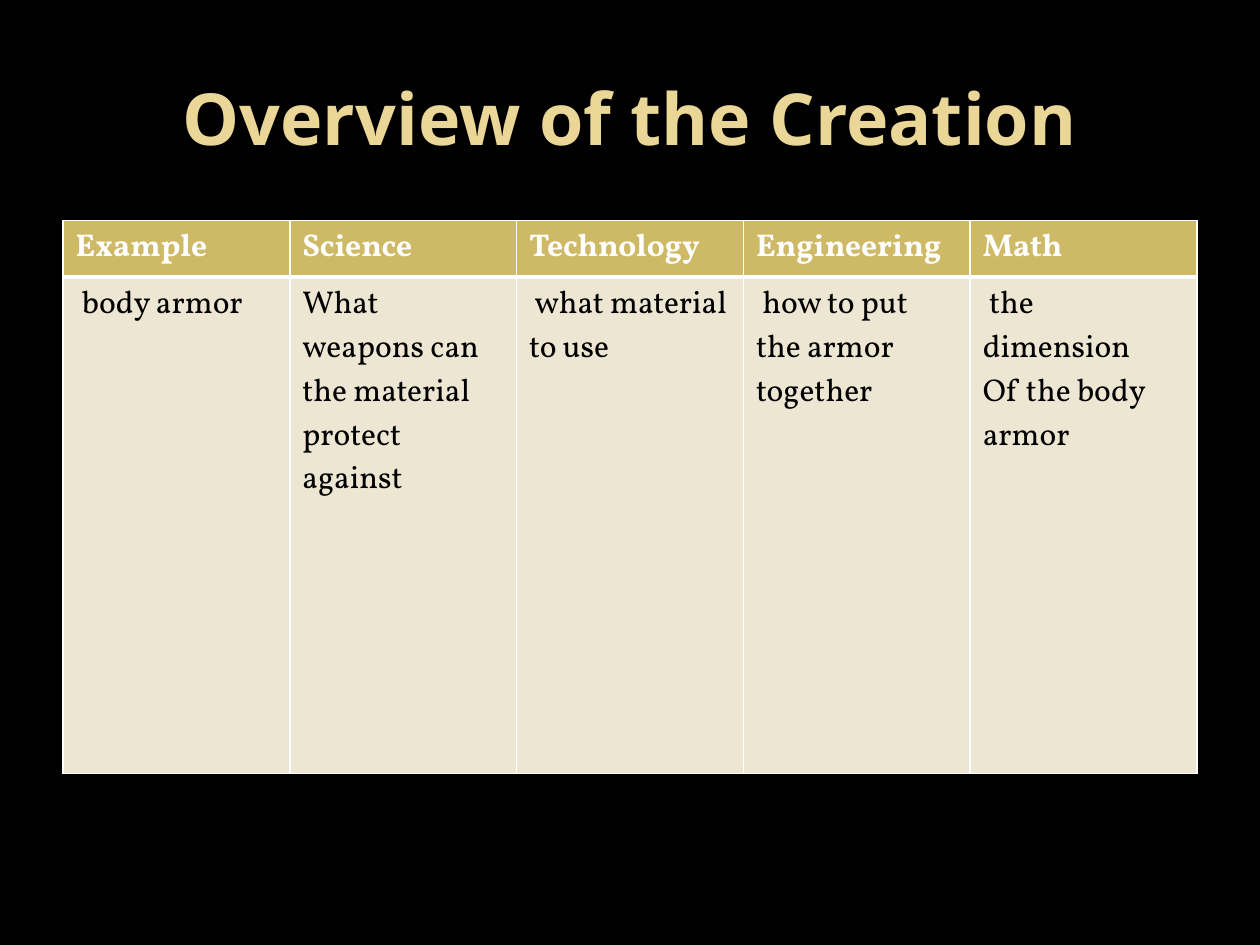
import pptx
import pptx.util
import pptx.dml.color
import pptx.enum.text
import pptx.oxml
import pptx.oxml.ns

HEADS = ["Example", "Science", "Technology", "Engineering", "Math"]
BODY = [
    " body armor",
    "What weapons can the material protect against",
    " what material to use",
    " how to put the armor together",
    " the dimension\nOf the body armor",
]


def color(code):
    return pptx.dml.color.RGBColor.from_string(code)


class Deck:
    """Style and current slide; lengths are counted in half-inch grid units."""
    unit = 0.5
    back, gold, head, cream = "000000", "EAD696", "CEB966", "EDE6D3"
    white, black = "FFFFFF", "000000"
    sans, serif = "Noto Sans", "Vollkorn"

    def __init__(self):
        self.prs = pptx.Presentation()
        self.prs.slide_width = self.grid(20)
        self.prs.slide_height = self.grid(15)
        self.slide = self.prs.slides.add_slide(self.prs.slide_layouts[5])
        fill = self.slide.background.fill
        fill.solid()
        fill.fore_color.rgb = color(self.back)

    def grid(self, count):
        return pptx.util.Inches(count * self.unit)

    def style(self, frame, face, size, tint, bold):
        for para in frame.paragraphs:
            for run in para.runs:
                run.font.name = face
                run.font.size = pptx.util.Pt(size)
                run.font.bold = bold
                run.font.color.rgb = color(tint)

    def title(self, text, left, top, width, height):
        box = self.slide.shapes.title
        box.left, box.top = self.grid(left), self.grid(top)
        box.width, box.height = self.grid(width), self.grid(height)
        frame = box.text_frame
        frame.text = text
        frame.vertical_anchor = pptx.enum.text.MSO_ANCHOR.MIDDLE
        frame.paragraphs[0].alignment = pptx.enum.text.PP_ALIGN.CENTER
        self.style(frame, self.sans, 41, self.gold, True)

    def border(self, cell, widths):
        props = cell._tc.get_or_add_tcPr()
        for spot, (side, width) in enumerate(widths.items()):
            line = pptx.oxml.parse_xml(
                f'<a:ln{side} {pptx.oxml.ns.nsdecls("a")} w="{pptx.util.Pt(width)}">'
                f'<a:solidFill><a:srgbClr val="{self.white}"/></a:solidFill>'
                f'</a:ln{side}>')
            props.insert(spot, line)

    def cell(self, cell, text, top):
        cell.text_frame.text = text
        self.style(cell.text_frame, self.serif, 18,
                   self.white if top else self.black, top)
        cell.fill.solid()
        cell.fill.fore_color.rgb = color(self.head if top else self.cream)
        # The rule between header and body is thicker
        self.border(cell, {"L": 1, "R": 1,
                           "T": 1 if top else 3, "B": 3 if top else 1})

    def table(self, rows, left, top, width, highs):
        count = len(rows[0])
        table = self.slide.shapes.add_table(
            len(rows), count, self.grid(left), self.grid(top),
            self.grid(width), self.grid(sum(highs))).table
        for col in table.columns:
            col.width = self.grid(width / count)
        for r, (texts, high) in enumerate(zip(rows, highs)):
            table.rows[r].height = self.grid(high)
            for c, text in enumerate(texts):
                self.cell(table.cell(r, c), text, r == 0)


def main():
    deck = Deck()
    # Heading
    deck.title("Overview of the Creation", 1, 0.6, 18, 2.5)
    # Subject table
    deck.table([HEADS, BODY], 1, 3.5, 18, [0.88, 7.88])
    deck.prs.save("out.pptx")


if __name__ == "__main__":
    main()
